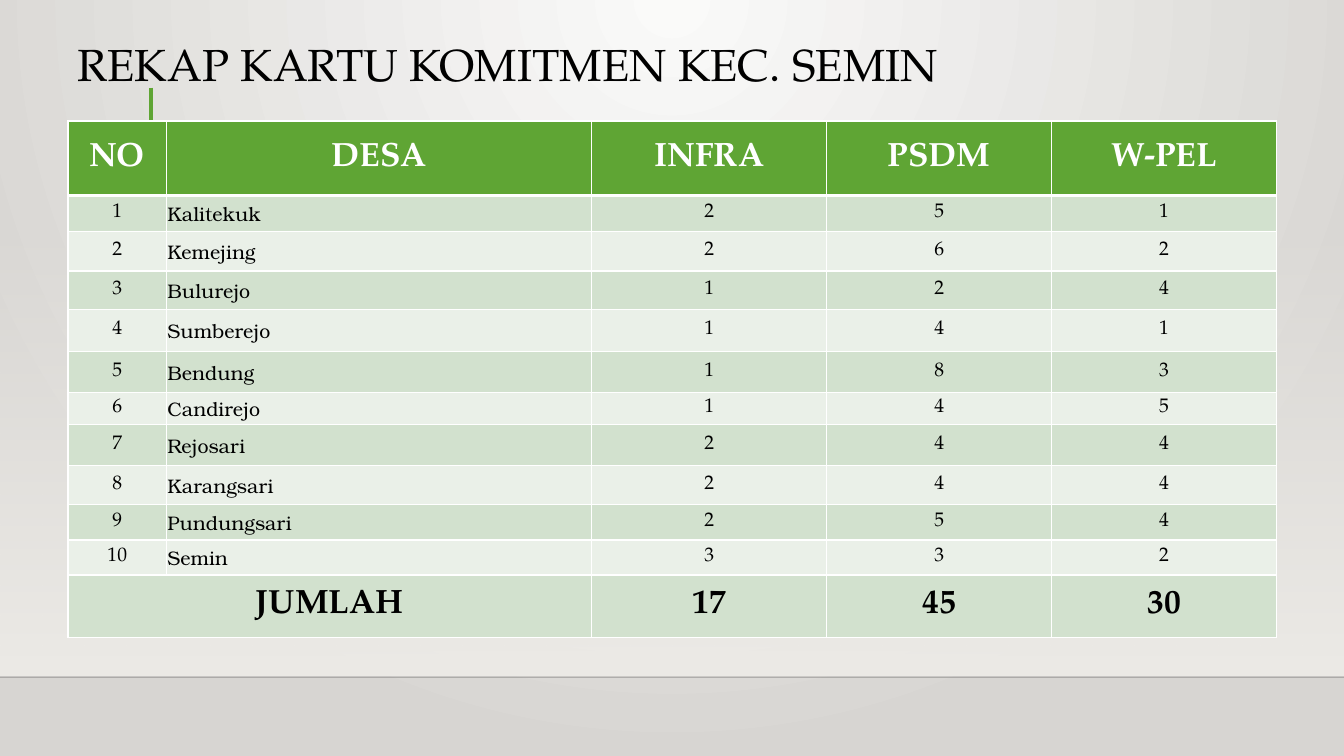
from lxml import etree
from pptx import Presentation
from pptx.dml.color import RGBColor
from pptx.enum.shapes import MSO_CONNECTOR, MSO_SHAPE
from pptx.enum.text import MSO_ANCHOR, MSO_AUTO_SIZE, PP_ALIGN
from pptx.oxml.ns import qn
from pptx.util import Pt

LEFT, CENTER = PP_ALIGN.LEFT, PP_ALIGN.CENTER
MIDDLE, BOTTOM = MSO_ANCHOR.MIDDLE, MSO_ANCHOR.BOTTOM
RECT, LINE = MSO_SHAPE.RECTANGLE, MSO_CONNECTOR.STRAIGHT
FIXED = MSO_AUTO_SIZE.NONE

COLORS = {
    "glow": "FAFAF9", "edge": "D7D5D2", "wall": "EDEBE7", "rule": "000001",
    "green": "5FA534", "dark": "D2E1CE", "light": "EAF0E8",
    "white": "FFFFFF", "black": "000000",
}
MAIN, ALT = "TeX Gyre Pagella", "TeX Gyre Bonum"

HEAD = ["NO", "DESA", "INFRA", "PSDM", "W-PEL"]
VILLAGES = [
    ("Kalitekuk", 2, 5, 1), ("Kemejing", 2, 6, 2), ("Bulurejo", 1, 2, 4),
    ("Sumberejo", 1, 4, 1), ("Bendung", 1, 8, 3), ("Candirejo", 1, 4, 5),
    ("Rejosari", 2, 4, 4), ("Karangsari", 2, 4, 4),
    ("Pundungsari", 2, 5, 4), ("Semin", 3, 3, 2),
]
WIDTHS = [70.3, 303.7, 168, 160.6, 160.6]
HEIGHTS = [53.3, 25.4, 28.5, 27.7, 29.6, 29.6, 22.6, 29.6, 27.6, 25.5, 25, 44.6]


def color(name):
    return RGBColor.from_string(COLORS[name])


def assign(item, values):
    for key, value in values.items():
        setattr(item, key, value)


def add(parent, tag, **attrs):
    return etree.SubElement(parent, qn(tag), attrs)


class Deck:
    def __init__(self, width, height):
        self.prs = Presentation()
        assign(self.prs, {"slide_width": Pt(width), "slide_height": Pt(height)})
        self.slide = self.prs.slides.add_slide(self.prs.slide_layouts[5])
        self.shapes = self.slide.shapes

    def backdrop(self, inner, outer):
        fill = self.slide.background.fill
        fill.gradient()
        for stop, name, place in zip(fill.gradient_stops, (inner, outer), (0, 1)):
            assign(stop, {"position": place})
            stop.color.rgb = color(name)
        grad = self.slide.element.find(".//" + qn("a:gradFill"))
        grad.remove(grad.find(qn("a:lin")))
        ring = add(grad, "a:path", path="circle")
        add(ring, "a:fillToRect", l="43000", t="0", r="43000", b="100000")

    def fade(self, x, y, w, h, name):
        box = self.shapes.add_shape(RECT, Pt(x), Pt(y), Pt(w), Pt(h))
        box.shadow.inherit = False
        box.line.fill.background()
        box.fill.gradient()
        box.fill.gradient_angle = 270
        for stop, place in zip(box.fill.gradient_stops, (0, 1)):
            assign(stop, {"position": place})
            stop.color.rgb = color(name)
        clear = box.element.find(".//" + qn("a:srgbClr"))
        add(clear, "a:alpha", val="0")

    def line(self, x1, y1, x2, y2, name, width, alpha=100):
        rule = self.shapes.add_connector(LINE, Pt(x1), Pt(y1), Pt(x2), Pt(y2))
        rule.line.width = Pt(width)
        rule.line.color.rgb = color(name)
        tint = rule.element.spPr.find(".//" + qn("a:srgbClr"))
        add(tint, "a:alpha", val=str(alpha * 1000))
        add(rule.element.spPr, "a:effectLst")

    def text(self, frame, words, font=MAIN, size=14, tint="black", bold=False, align=CENTER):
        part = frame.paragraphs[0]
        part.alignment = align
        run = part.add_run()
        run.text = str(words)
        assign(run.font, {"name": font, "size": Pt(size), "bold": bold})
        run.font.color.rgb = color(tint)
        return part

    def title(self, x, y, w, h, words):
        head = self.shapes.title
        assign(head, {"left": Pt(x), "top": Pt(y), "width": Pt(w), "height": Pt(h)})
        frame = head.text_frame
        assign(frame, {"auto_size": FIXED, "word_wrap": True, "vertical_anchor": BOTTOM})
        self.text(frame, words, size=32, align=LEFT).line_spacing = 0.9
        self.shapes.element.append(head.element)

    def grid(self, x, y, widths, heights):
        frame = self.shapes.add_table(len(heights), len(widths), Pt(x), Pt(y),
                                      Pt(sum(widths)), Pt(sum(heights)))
        table = frame.table
        assign(table, {"first_row": False, "horz_banding": False})
        for col, width in zip(table.columns, widths):
            col.width = Pt(width)
        for row, height in zip(table.rows, heights):
            row.height = Pt(height)
        return table

    def cell(self, cell, words, fill, edges, pad=None, **style):
        cell.vertical_anchor = MIDDLE
        if pad is not None:
            assign(cell, {"margin_left": Pt(pad), "margin_right": Pt(pad),
                          "margin_top": Pt(pad), "margin_bottom": 0})
        props = cell._tc.get_or_add_tcPr()
        for side, width in zip("LRTB", edges):
            edge = add(props, "a:ln" + side, w=str(Pt(width)))
            add(add(edge, "a:solidFill"), "a:srgbClr", val=COLORS["white"])
        cell.fill.solid()
        cell.fill.fore_color.rgb = color(fill)
        if words != "":
            self.text(cell.text_frame, words, **style)


def main():
    deck = Deck(960, 540)

    # Background, wall and floor line
    deck.backdrop("glow", "edge")
    deck.fade(0, 158.4, 960, 324, "wall")
    deck.line(0, 483.8, 960, 483.8, "rule", 1, 20)

    # Title with its accent line
    deck.line(108, 62.6, 108, 146.9, "green", 3)
    deck.title(48.2, 23, 863.3, 46.1, "REKAP KARTU KOMITMEN KEC. SEMIN")

    # Table: head, villages, totals
    totals = [sum(col) for col in list(zip(*VILLAGES))[1:]]
    rows = [HEAD]
    rows += [(num, *village) for num, village in enumerate(VILLAGES, 1)]
    rows += [("JUMLAH", "", *totals)]
    last = len(rows) - 1
    table = deck.grid(48.6, 86.4, WIDTHS, HEIGHTS)
    table.cell(last, 0).merge(table.cell(last, 1))
    big = {"size": 24, "bold": True}
    name = {"font": ALT, "align": LEFT, "pad": 0.72}
    for r, row in enumerate(rows):
        fill = "green" if r == 0 else "dark" if r % 2 else "light"
        edges = (1, 1, 3 if r == 1 else 1, 3 if r == 0 else 1)
        for c, words in enumerate(row):
            style = big if r in (0, last) else name if c == 1 else {}
            tint = "white" if r == 0 else "black"
            deck.cell(table.cell(r, c), words, fill, edges, tint=tint, **style)

    deck.prs.save("out.pptx")


if __name__ == "__main__":
    main()
